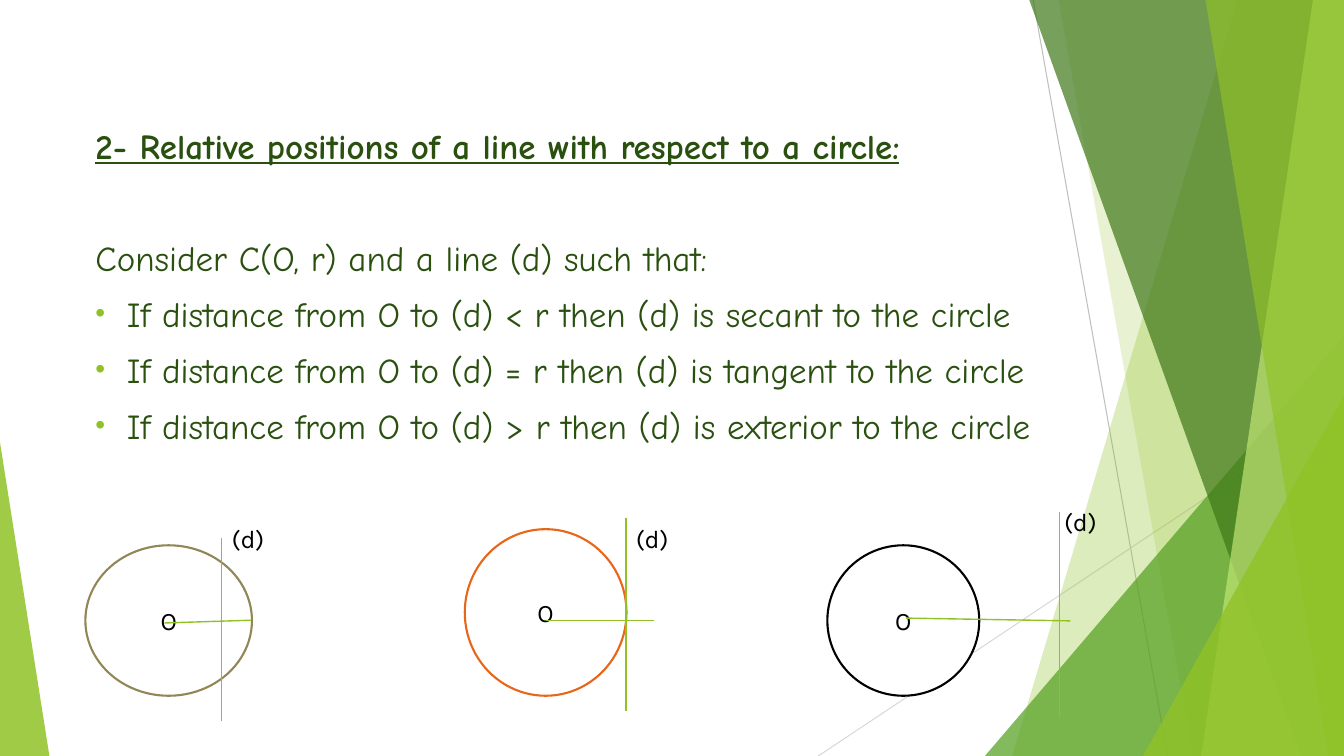
from lxml import etree
from pptx import Presentation
from pptx.dml.color import RGBColor
from pptx.enum.shapes import MSO_CONNECTOR, MSO_SHAPE
from pptx.enum.text import MSO_ANCHOR, MSO_AUTO_SIZE, PP_ALIGN
from pptx.oxml.ns import qn
from pptx.util import Pt

LINE = MSO_CONNECTOR.STRAIGHT
TRIANGLE = MSO_SHAPE.RIGHT_TRIANGLE
WEDGE = MSO_SHAPE.ISOSCELES_TRIANGLE
ROUND = MSO_SHAPE.FLOWCHART_CONNECTOR
TOP, MIDDLE = MSO_ANCHOR.TOP, MSO_ANCHOR.MIDDLE
LEFT, CENTER = PP_ALIGN.LEFT, PP_ALIGN.CENTER
FIXED = MSO_AUTO_SIZE.NONE

WIDE, HIGH, EDGE = 960, 540, -0.72
HEAD, LABEL = "Comic Neue", "Karla"
COLORS = {
    "lime": "90C226", "leaf": "54A021", "moss": "3F7819", "pale": "C0E474",
    "text": "2A5010", "black": "000000", "white": "FFFFFF",
    "olive": "918655", "orange": "E76618", "gray": "BFBFBF", "mist": "D9D9D9",
}


def add(parent, tag, **attrs):
    """Append a drawing element to its parent and return it."""
    node = etree.SubElement(parent, qn("a:" + tag))
    for key, value in attrs.items():
        node.set(key, str(value))
    return node


def write(para, text, font=LABEL, size=18, color="black", bold=False,
          under=False, align=LEFT, before=0, bullet=None):
    """Write formatted text into a paragraph."""
    para.alignment, para.space_before = align, Pt(before)
    run = para.add_run()
    run.text = text
    face = run.font
    face.name, face.size, face.bold, face.underline = font, Pt(size), bold, under
    face.color.rgb = RGBColor.from_string(COLORS[color])
    props = para._p.get_or_add_pPr()
    indent = Pt(22.5) if bullet else 0
    props.set("marL", str(indent))
    props.set("indent", str(-indent))
    if bullet:
        add(add(props, "buClr"), "srgbClr", val=COLORS["lime"])
        add(props, "buSzPct", val=80000)
        add(props, "buFont", typeface="Arial")
        add(props, "buChar", char=bullet)
    else:
        add(props, "buNone")


class Canvas:
    """Hold the style and the current slide."""

    def __init__(self, slide, colors):
        self.slide, self.shapes, self.colors = slide, slide.shapes, colors

    def paint(self, shape, color, alpha=100, line=None):
        """Set the fill, its opacity and the outline."""
        shape.shadow.inherit = False
        shape.fill.solid()
        shape.fill.fore_color.rgb = RGBColor.from_string(self.colors[color])
        if alpha < 100:
            tint = shape._element.spPr.find(qn("a:solidFill"))[0]
            add(tint, "alpha", val=alpha * 1000)
        if line:
            shape.line.color.rgb = RGBColor.from_string(self.colors[line])
            shape.line.width = Pt(1.5)
        else:
            shape.line.fill.background()

    def line(self, start, end, color="lime", width=1):
        """Draw a straight line."""
        rule = self.shapes.add_connector(LINE, *map(Pt, start + end))
        rule.line.color.rgb = RGBColor.from_string(self.colors[color])
        rule.line.width = Pt(width)
        add(rule._element.spPr, "effectLst")

    def band(self, top, base, color, alpha):
        """Draw a slanted band that reaches the right edge."""
        build = self.shapes.build_freeform(Pt(top), Pt(EDGE), scale=1.0)
        build.add_line_segments([
            (Pt(WIDE), Pt(EDGE)), (Pt(WIDE), Pt(HIGH)), (Pt(base), Pt(HIGH))])
        self.paint(build.convert_to_shape(), color, alpha)

    def wedge(self, left, top, width, tip, color, alpha):
        """Draw a triangle that stands on the bottom edge."""
        shape = self.shapes.add_shape(
            WEDGE, Pt(left), Pt(top), Pt(width), Pt(HIGH - top))
        shape.adjustments[0] = tip
        self.paint(shape, color, alpha)

    def circle(self, box, color):
        """Draw a circle with its centre O."""
        shape = self.shapes.add_shape(ROUND, *map(Pt, box))
        self.paint(shape, "white", line=color)
        shape.text_frame.vertical_anchor = MIDDLE
        write(shape.text_frame.paragraphs[0], "O", align=CENTER)

    def label(self, text, left, top, width):
        """Place a short label."""
        box = self.shapes.add_textbox(Pt(left), Pt(top), Pt(width), Pt(29))
        box.text_frame.word_wrap = True
        write(box.text_frame.paragraphs[0], text)

    def fill(self, holder, box, items):
        """Move a placeholder and fill it with paragraphs."""
        holder.left, holder.top, holder.width, holder.height = map(Pt, box)
        frame = holder.text_frame
        frame.auto_size, frame.vertical_anchor = FIXED, TOP
        frame.word_wrap = True
        for i, (text, style) in enumerate(items):
            para = frame.add_paragraph() if i else frame.paragraphs[0]
            write(para, text, font=HEAD, size=25, color="text", **style)


def main():
    """Build the slide and save it."""
    deck = Presentation()
    deck.slide_width, deck.slide_height = Pt(WIDE), Pt(HIGH)
    slide = deck.slides.add_slide(deck.slide_layouts[1])
    page = Canvas(slide, COLORS)

    page.line((738, 0), (834, HIGH), "gray", 0.75)
    page.line((WIDE, 290), (584.5, HIGH), "mist", 0.75)
    page.band(884, 723, "lime", 30)
    page.band(756, 852, "lime", 20)
    page.wedge(703.5, 240, 256.5, 1, "leaf", 72)
    page.band(735, 929.5, "moss", 70)
    page.band(938, 858, "pale", 70)
    page.band(861, 949, "lime", 65)
    page.wedge(816.5, 283, 143.5, 1, "lime", 80)
    page.wedge(0, 316, 35.3, 0, "lime", 85)

    cases = [
        ((61, 389.5, 119, 107.5), "olive", (158.4, 384.5, 515), (158.4, 370, 45),
         ((117.4, 445), (179.5, 443))),
        ((332, 378, 115.5, 119), "orange", (447.1, 370, 508), (447.1, 370, 45),
         ((390.2, 443), (467.3, 443))),
        ((591, 389.5, 108.5, 107.5), "black", (756.7, 366, 512), (753, 358, 39),
         ((647.3, 441.5), (764.6, 443.5))),
    ]
    for box, color, (x, top, base), tag, ray in cases:
        page.circle(box, color)
        page.line((x, top), (x, base))
        page.label("(d)", *tag)
        page.line(*ray)

    page.fill(slide.shapes.title, (61, 85, 780, 40), [
        ("2- Relative positions of a line with respect to a circle:",
         {"bold": True, "under": True})])
    rules = [("<", "secant"), ("=", "tangent"), (">", "exterior")]
    page.fill(slide.placeholders[1], (61, 165, 780, 225), [
        ("Consider C(O, r) and a line (d) such that:", {"before": 10})] + [
        (f"If distance from O to (d) {sign} r then (d) is {kind} to the circle",
         {"before": 10, "bullet": "•"}) for sign, kind in rules])
    deck.save("out.pptx")


if __name__ == "__main__":
    main()
